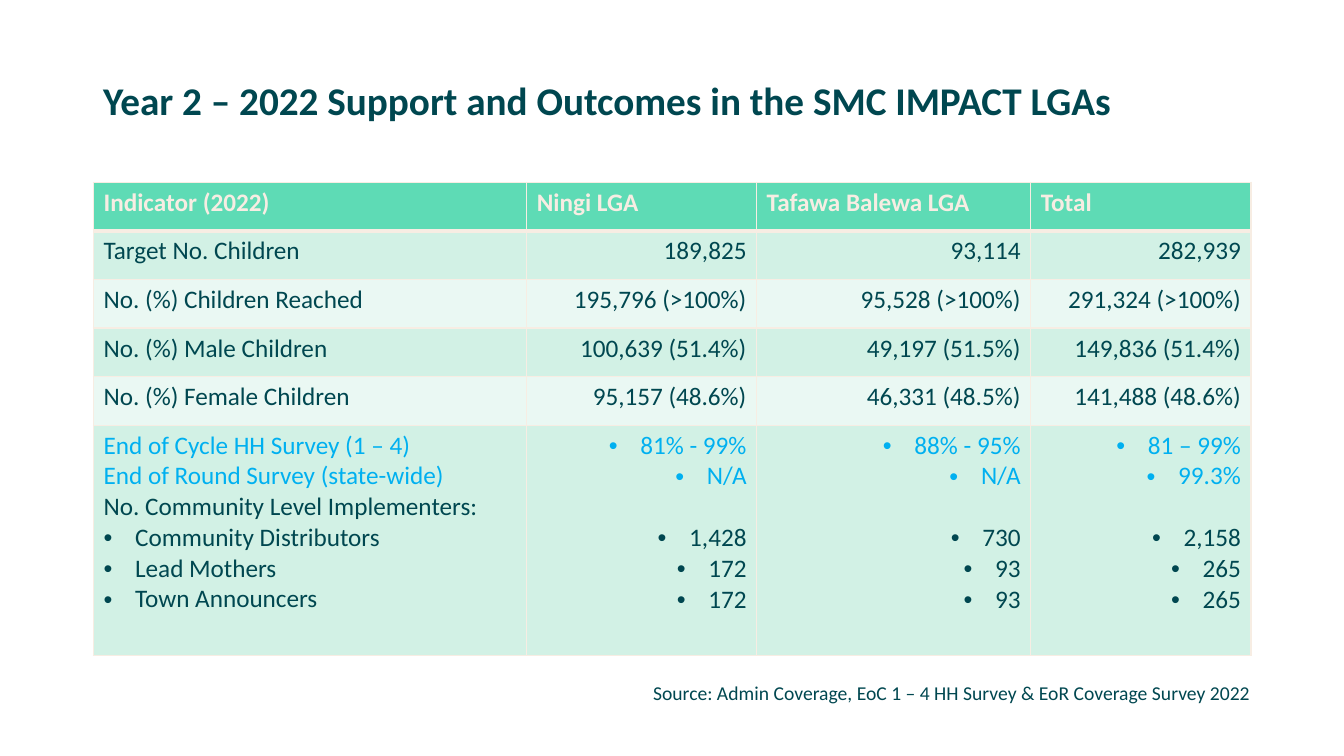
from lxml import etree
from pptx import Presentation
from pptx.dml.color import RGBColor
from pptx.enum.text import MSO_ANCHOR, PP_ALIGN
from pptx.oxml.ns import qn
from pptx.util import Pt

LEFT, RIGHT = PP_ALIGN.LEFT, PP_ALIGN.RIGHT
MIDDLE = MSO_ANCHOR.MIDDLE
TITLE_ONLY = 5

TEAL, CYAN, CREAM = "004750", "00B0F0", "F7EDE3"
HEADER_FILL, BANDS = "5EDBB5", ("D2F1E5", "EAF8F3")
LINE_HEIGHT = 22
BULLET_INDENT = 22.5

COLUMN_WIDTHS = (309.5, 164.2, 195.8, 157.3)
ROW_HEIGHTS = (34.7,) * 5 + (164.8,)
ROWS = (
    ("Indicator (2022)", "Ningi LGA", "Tafawa Balewa LGA", "Total"),
    ("Target No. Children", "189,825", "93,114", "282,939"),
    ("No. (%) Children Reached", "195,796 (>100%)", "95,528 (>100%)", "291,324 (>100%)"),
    ("No. (%) Male Children", "100,639 (51.4%)", "49,197 (51.5%)", "149,836 (51.4%)"),
    ("No. (%) Female Children", "95,157 (48.6%)", "46,331 (48.5%)", "141,488 (48.6%)"),
)
SURVEYS = ("End of Cycle HH Survey (1 – 4)", "End of Round Survey (state-wide)")
IMPLEMENTERS_HEADING = "No. Community Level Implementers:"
IMPLEMENTERS = ("Community Distributors", "Lead Mothers", "Town Announcers")
RESULTS = (
    (("81% - 99%", "N/A"), ("1,428", "172", "172")),
    (("88% - 95%", "N/A"), ("730", "93", "93")),
    (("81 – 99%", "99.3%"), ("2,158", "265", "265")),
)


def rgb(value):
    return RGBColor.from_string(value)


class SlideBuilder:
    def __init__(self, slide, font_name):
        self.slide = slide
        self.font_name = font_name

    def fill_paragraph(self, paragraph, text, size, color=TEAL, bold=False, align=LEFT,
                       bullet=False):
        paragraph.text = text
        paragraph.alignment = align
        font = paragraph.font
        font.name, font.size, font.bold = self.font_name, Pt(size), bold
        font.color.rgb = rgb(color)
        if bullet:
            properties = paragraph._p.get_or_add_pPr()
            properties.set("marL", str(Pt(BULLET_INDENT)))
            properties.set("indent", str(-Pt(BULLET_INDENT)))
            etree.SubElement(properties, qn("a:buFont")).set("typeface", "Arial")
            etree.SubElement(properties, qn("a:buChar")).set("char", "•")
            properties.append(properties.find(qn("a:defRPr")))

    def title(self, text, left, top, width, height):
        shape = self.slide.shapes.title
        shape.left, shape.top, shape.width, shape.height = map(Pt, (left, top, width, height))
        shape.text_frame.vertical_anchor = MIDDLE
        self.fill_paragraph(shape.text_frame.paragraphs[0], text, 28, bold=True)

    def text(self, text, left, top, width, height, size):
        shape = self.slide.shapes.add_textbox(Pt(left), Pt(top), Pt(width), Pt(height))
        shape.text_frame.word_wrap = True
        self.fill_paragraph(shape.text_frame.paragraphs[0], text, size)

    def table(self, left, top, widths, heights):
        frame = self.slide.shapes.add_table(len(heights), len(widths), Pt(left), Pt(top),
                                            Pt(sum(widths)), Pt(sum(heights)))
        for column, width in zip(frame.table.columns, widths):
            column.width = Pt(width)
        for row, height in zip(frame.table.rows, heights):
            row.height = Pt(height)
        return frame.table

    def cell(self, cell, fill, top_border=1, bottom_border=1):
        """Set borders before the fill, as the schema orders them."""
        borders = {"a:lnL": 1, "a:lnR": 1, "a:lnT": top_border, "a:lnB": bottom_border}
        for tag, width in borders.items():
            line = etree.SubElement(cell._tc.get_or_add_tcPr(), qn(tag), w=str(Pt(width)))
            solid = etree.SubElement(line, qn("a:solidFill"))
            etree.SubElement(solid, qn("a:srgbClr"), val=CREAM)
        cell.fill.solid()
        cell.fill.fore_color.rgb = rgb(fill)

    def lines(self, cell, entries, align):
        """Add (text, color, bullet, space before) entries as paragraphs."""
        frame = cell.text_frame
        for index, (text, color, bullet, space) in enumerate(entries):
            paragraph = frame.add_paragraph() if index else frame.paragraphs[0]
            paragraph.space_before = Pt(space)
            self.fill_paragraph(paragraph, text, 18, color, align=align, bullet=bullet)


def add_indicator_table(builder):
    table = builder.table(66.8, 130.2, COLUMN_WIDTHS, ROW_HEIGHTS)
    for row in range(len(ROW_HEIGHTS)):
        for column in range(len(COLUMN_WIDTHS)):
            fill = BANDS[(row - 1) % 2] if row else HEADER_FILL
            builder.cell(table.cell(row, column), fill,
                         top_border=3 if row == 1 else 1, bottom_border=1 if row else 3)
    for row, texts in enumerate(ROWS):
        for column, text in enumerate(texts):
            builder.fill_paragraph(table.cell(row, column).text_frame.paragraphs[0], text, 18,
                                   color=TEAL if row else CREAM, bold=row == 0,
                                   align=RIGHT if row and column else LEFT)

    last = len(ROWS)
    labels = [(text, CYAN, False, 0) for text in SURVEYS]
    labels.append((IMPLEMENTERS_HEADING, TEAL, False, 0))
    labels += [(text, TEAL, True, 0) for text in IMPLEMENTERS]
    builder.lines(table.cell(last, 0), labels, LEFT)
    for column, (surveys, counts) in enumerate(RESULTS, start=1):
        values = [(text, CYAN, True, 0) for text in surveys]
        values += [(text, TEAL, True, 0 if index else LINE_HEIGHT)
                   for index, text in enumerate(counts)]
        builder.lines(table.cell(last, column), values, RIGHT)


def main():
    presentation = Presentation()
    presentation.slide_width, presentation.slide_height = Pt(960), Pt(540)
    slide = presentation.slides.add_slide(presentation.slide_layouts[TITLE_ONLY])
    builder = SlideBuilder(slide, "Calibri")
    builder.title("Year 2 – 2022 Support and Outcomes in the SMC IMPACT LGAs", 66.5, 50.4, 826.5, 41.2)
    add_indicator_table(builder)
    builder.text("Source: Admin Coverage, EoC 1 – 4 HH Survey & EoR Coverage Survey 2022",
                 459.4, 483.1, 453.6, 24.5, 14)
    presentation.save("out.pptx")


if __name__ == "__main__":
    main()
